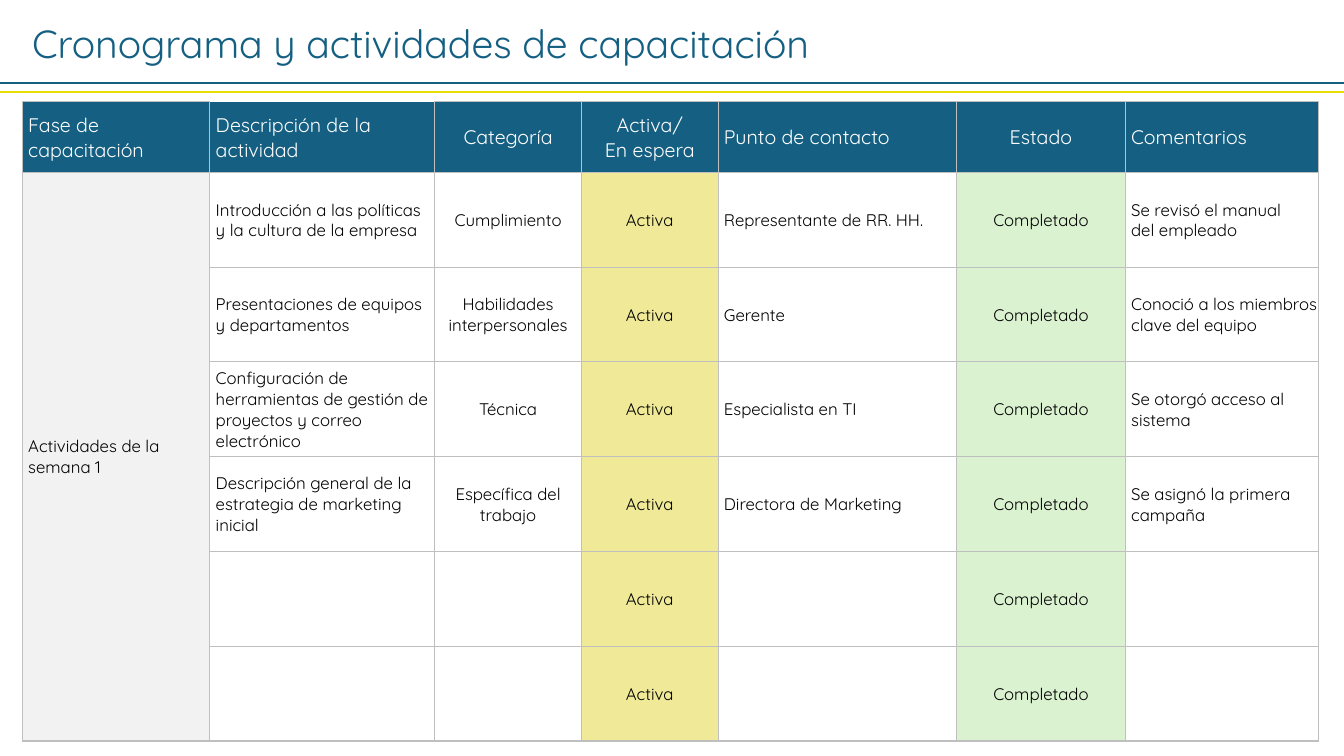
from copy import deepcopy
from dataclasses import dataclass

from lxml import etree
from pptx import Presentation
from pptx.dml.color import RGBColor
from pptx.enum.shapes import MSO_CONNECTOR
from pptx.enum.text import MSO_ANCHOR, MSO_AUTO_SIZE, PP_ALIGN
from pptx.oxml.ns import qn
from pptx.util import Inches, Pt

LEFT, CENTER = PP_ALIGN.LEFT, PP_ALIGN.CENTER
MIDDLE = MSO_ANCHOR.MIDDLE
FIT = MSO_AUTO_SIZE.SHAPE_TO_FIT_TEXT
STRAIGHT = MSO_CONNECTOR.STRAIGHT

BLUE = RGBColor(0x15, 0x60, 0x82)
YELLOW = RGBColor(0xE8, 0xDD, 0x06)
SAND = RGBColor(0xF0, 0xEA, 0x98)
GREEN = RGBColor(0xDA, 0xF2, 0xD0)
PALE = RGBColor(0xF2, 0xF2, 0xF2)
GRAY = RGBColor(0xBF, 0xBF, 0xBF)
WHITE = RGBColor(0xFF, 0xFF, 0xFF)
BLACK = RGBColor(0, 0, 0)

FONT = "Quicksand"
WIDTH = 13.33
HEAD_HEIGHT, ROW_HEIGHT = 0.7, 0.94


@dataclass(frozen=True)
class Column:
    title: str
    width: float
    align: PP_ALIGN = LEFT
    fill: RGBColor = WHITE


@dataclass(frozen=True)
class Rule:
    top: float
    color: RGBColor


COLUMNS = [
    Column("Fase de capacitación", 1.86, fill=PALE),
    Column("Descripción de la actividad", 2.23),
    Column("Categoría", 1.46, CENTER),
    Column("Activa/\nEn espera", 1.35, CENTER, SAND),
    Column("Punto de contacto", 2.37),
    Column("Estado", 1.67, CENTER, GREEN),
    Column("Comentarios", 1.92),
]
RULES = [Rule(0.82, BLUE), Rule(0.91, YELLOW)]
PHASE = "Actividades de la semana 1"
TASKS = [
    ("Introducción a las políticas y la cultura de la empresa", "Cumplimiento",
     "Representante de RR. HH.", "Se revisó el manual\ndel empleado"),
    ("Presentaciones de equipos y departamentos", "Habilidades interpersonales",
     "Gerente", "Conoció a los miembros clave del equipo"),
    ("Configuración de herramientas de gestión de proyectos y correo electrónico",
     "Técnica", "Especialista en TI", "Se otorgó acceso al sistema"),
    ("Descripción general de la estrategia de marketing inicial",
     "Específica del trabajo", "Directora de Marketing",
     "Se asignó la primera campaña"),
    ("", "", "", ""),
    ("", "", "", ""),
]


def write(frame, text: str, size: float, color: RGBColor, align=LEFT) -> None:
    frame.word_wrap = True
    para = frame.paragraphs[0]
    para.text = text
    para.alignment = align
    style = {"name": FONT, "size": Pt(size)}
    for run in para.runs:
        for key, value in style.items():
            setattr(run.font, key, value)
        run.font.color.rgb = color
    for br in para._p.findall(qn("a:br")):
        br.insert(0, deepcopy(para.runs[0]._r.rPr))


def add_rule(slide, rule: Rule) -> None:
    line = slide.shapes.add_connector(
        STRAIGHT, 0, Inches(rule.top), Inches(WIDTH), Inches(rule.top))
    line.line.color.rgb = rule.color
    line.line.width = Pt(1.5)
    etree.SubElement(line._element.spPr, qn("a:effectLst"))


def add_edges(cell, widths: dict[str, float]) -> None:
    props = cell._tc.get_or_add_tcPr()
    for spot, (side, width) in enumerate(widths.items()):
        edge = etree.Element(qn(f"a:ln{side}"), w=str(Pt(width)))
        if width:
            fill = etree.SubElement(edge, qn("a:solidFill"))
            etree.SubElement(fill, qn("a:srgbClr"), val=str(GRAY))
        else:
            etree.SubElement(edge, qn("a:noFill"))
        props.insert(spot, edge)


def fill_cell(cell, text: str, column: Column, head: bool, edges: dict[str, float]) -> None:
    inset = 0.06 if column.align == LEFT else 0.01
    style = {
        "margin_left": Inches(inset), "margin_right": Inches(0.01),
        "margin_top": Inches(0.01), "margin_bottom": 0,
        "vertical_anchor": MIDDLE,
    }
    for key, value in style.items():
        setattr(cell, key, value)
    cell.fill.solid()
    cell.fill.fore_color.rgb = BLUE if head else column.fill
    write(cell.text_frame, text, 14 if head else 12,
          WHITE if head else BLACK, column.align)
    add_edges(cell, edges)


def add_plan(slide) -> None:
    rows = [[column.title for column in COLUMNS]]
    for spot, (task, kind, contact, note) in enumerate(TASKS):
        phase = "" if spot else PHASE
        rows.append([phase, task, kind, "Activa", contact, "Completado", note])
    last = len(rows) - 1
    table = slide.shapes.add_table(
        len(rows), len(COLUMNS), Inches(0.22), Inches(1.01),
        Inches(12.88), Inches(HEAD_HEIGHT + last * ROW_HEIGHT)).table
    table.first_row = table.horz_banding = False
    for col, column in enumerate(COLUMNS):
        table.columns[col].width = Inches(column.width)
    for row, texts in enumerate(rows):
        table.rows[row].height = Inches(ROW_HEIGHT if row else HEAD_HEIGHT)
        for col, text in enumerate(texts):
            top = 0 if (row, col) == (0, 1) else 0.5
            base = 1.5 if row == last or (row and col == 0) else 0.5
            edges = {"L": 0.5, "R": 0.5, "T": top, "B": base}
            fill_cell(table.cell(row, col), text, COLUMNS[col], row == 0, edges)
    table.cell(1, 0).merge(table.cell(last, 0))


def main() -> None:
    deck = Presentation()
    deck.slide_width, deck.slide_height = Inches(WIDTH), Inches(7.5)
    slide = deck.slides.add_slide(deck.slide_layouts[6])
    title = slide.shapes.add_textbox(
        Inches(0.22), Inches(0.14), Inches(11.1), Inches(0.57))
    write(title.text_frame, "Cronograma y actividades de capacitación", 28, BLUE)
    title.text_frame.auto_size = FIT
    for rule in RULES:
        add_rule(slide, rule)
    add_plan(slide)
    deck.save("out.pptx")


if __name__ == "__main__":
    main()
